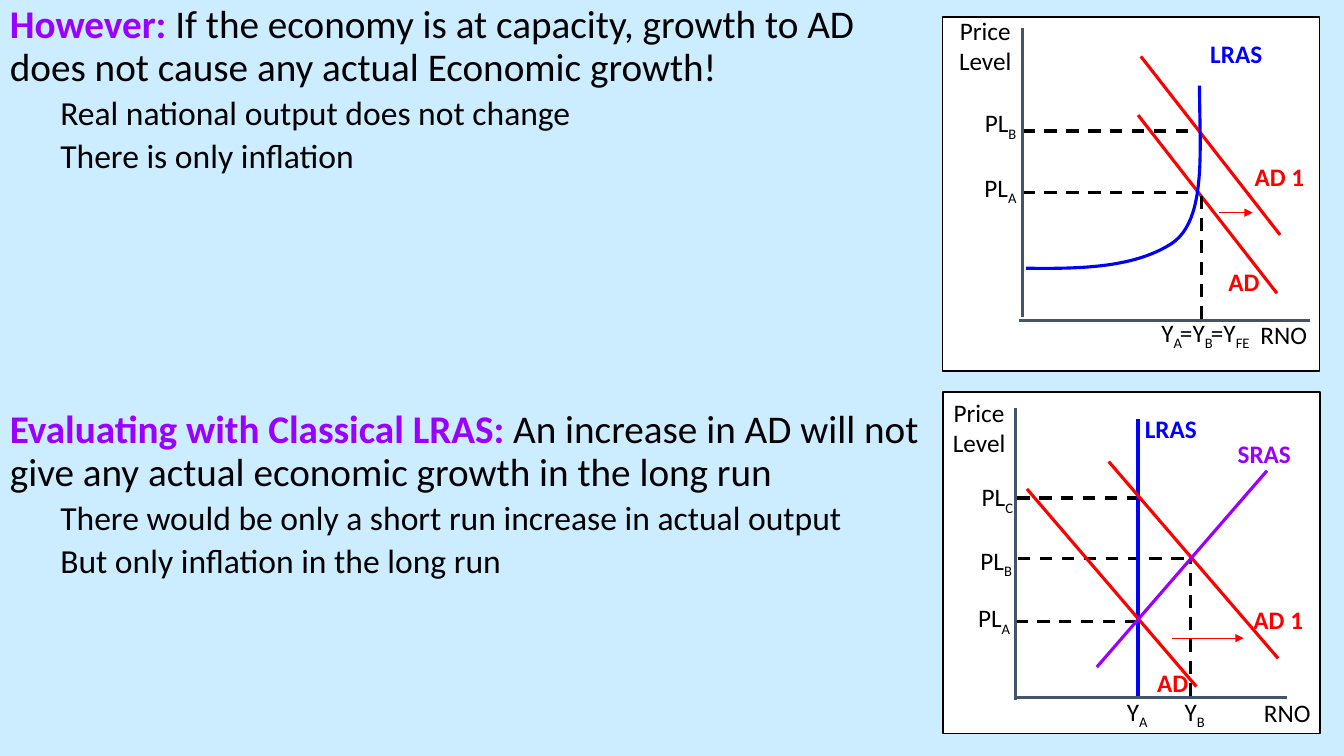
from dataclasses import dataclass

from lxml import etree
from pptx import Presentation
from pptx.dml.color import RGBColor
from pptx.enum.dml import MSO_LINE
from pptx.enum.shapes import MSO_CONNECTOR, MSO_SHAPE
from pptx.enum.text import PP_ALIGN
from pptx.oxml.ns import qn
from pptx.util import Cm, Pt

STRAIGHT = MSO_CONNECTOR.STRAIGHT
RECTANGLE = MSO_SHAPE.RECTANGLE
DASH = MSO_LINE.DASH
CENTER = PP_ALIGN.CENTER
LEFT = PP_ALIGN.LEFT


@dataclass(frozen=True)
class Theme:
    font: str = "Calibri"
    background: str = "CCECFF"
    panel: str = "FFFFFF"
    ink: str = "000000"
    axis: str = "44546A"
    demand: str = "FF0000"
    long_run: str = "0000FF"
    accent: str = "9900FF"
    heading_size: int = 28
    point_size: int = 24
    label_size: int = 18
    line_width: float = 2.25
    arrow_width: float = 0.5


class SlideBuilder:
    def __init__(self, slide, theme):
        self.slide = slide
        self.theme = theme
        self.shapes = slide.shapes
        fill = slide.background.fill
        fill.solid()
        fill.fore_color.rgb = RGBColor.from_string(theme.background)

    def style_font(self, font, size, color, bold=False):
        font.name = self.theme.font
        font.size = Pt(size)
        font.bold = bold
        font.color.rgb = RGBColor.from_string(color)

    def style_line(self, line, color, width):
        line.color.rgb = RGBColor.from_string(color)
        line.width = Pt(width)

    def text_frame(self, left, top, width, height):
        box = self.shapes.add_textbox(Cm(left), Cm(top), Cm(width), Cm(height))
        box.text_frame.word_wrap = True
        return box.text_frame

    def outline(self, left, top, width, height, sections):
        theme = self.theme
        frame = self.text_frame(left, top, width, height)
        paragraph = frame.paragraphs[0]
        for index, (lead, statement, space, points) in enumerate(sections):
            if index:
                paragraph = frame.add_paragraph()
            paragraph.line_spacing = 0.9
            paragraph.space_before = Pt(space)
            for text, color, bold in ((lead, theme.accent, True), (statement, theme.ink, False)):
                run = paragraph.add_run()
                run.text = text
                self.style_font(run.font, theme.heading_size, color, bold)
            for point in points:
                paragraph = frame.add_paragraph()
                paragraph.text = point
                paragraph.level = 1
                paragraph.line_spacing = 0.9
                paragraph.space_before = Pt(5)
                properties = paragraph._p.get_or_add_pPr()
                properties.set("marL", str(Cm(1.27)))
                properties.set("indent", "0")
                self.style_font(paragraph.font, theme.point_size, theme.ink)

    def start_diagram(self, left, top, width, height):
        self.shapes = self.slide.shapes.add_group_shape().shapes
        panel = self.shapes.add_shape(RECTANGLE, Cm(left), Cm(top), Cm(width), Cm(height))
        panel.shadow.inherit = False
        panel.fill.solid()
        panel.fill.fore_color.rgb = RGBColor.from_string(self.theme.panel)
        self.style_line(panel.line, self.theme.ink, 1)

    def line(self, start_x, start_y, end_x, end_y, color, width=None):
        connector = self.shapes.add_connector(
            STRAIGHT, Cm(start_x), Cm(start_y), Cm(end_x), Cm(end_y))
        self.style_line(connector.line, color, width or self.theme.line_width)
        etree.SubElement(connector.element.spPr, qn("a:effectLst"))
        return connector

    def guide(self, *ends):
        self.line(*ends, self.theme.ink).line.dash_style = DASH

    def arrow(self, *ends):
        connector = self.line(*ends, self.theme.demand, self.theme.arrow_width)
        properties = connector.line._get_or_add_ln()
        etree.SubElement(properties, qn("a:tailEnd"), type="triangle")

    def curve(self, segments, color, steps=24):
        points = []
        for controls in segments:
            for step in range(steps + 1):
                t = step / steps
                weights = ((1 - t) ** 3, 3 * t * (1 - t) ** 2, 3 * t * t * (1 - t), t ** 3)
                points.append(tuple(
                    Cm(sum(weight * value for weight, value in zip(weights, axis)))
                    for axis in zip(*controls)))
        builder = self.shapes.build_freeform(*points[0])
        builder.add_line_segments(points[1:], close=False)
        shape = builder.convert_to_shape()
        shape.shadow.inherit = False
        shape.fill.background()
        self.style_line(shape.line, color, self.theme.line_width)

    def label(self, text, left, top, width, height, subscript="", color=None):
        frame = self.text_frame(left, top, width, height)
        if color is None:
            frame.margin_left = frame.margin_right = 0
        frame.text = text
        for paragraph in frame.paragraphs:
            paragraph.alignment = LEFT if color else CENTER
            self.style_font(paragraph.font, self.theme.label_size,
                            color or self.theme.ink, bool(color))
        if subscript:
            run = frame.paragraphs[0].add_run()
            run.text = subscript
            run._r.get_or_add_rPr().set("baseline", "-25000")


def draw_capacity_diagram(builder):
    theme = builder.theme
    builder.start_diagram(23.75, 0.43, 9.5, 8.92)
    builder.guide(25.76, 3.3, 30.23, 3.3)
    builder.guide(25.76, 4.85, 30.12, 4.85)
    builder.line(25.76, 0.71, 25.76, 7.98, theme.axis)
    builder.line(25.68, 8.08, 33.02, 8.08, theme.axis)
    builder.line(28.68, 2.9, 32.18, 7.39, theme.demand)
    builder.line(28.75, 1.42, 32.26, 5.92, theme.demand)
    builder.guide(30.28, 8.03, 30.28, 4.88)
    bend = (29.51, 6.15)
    builder.curve([
        [(25.86, 6.76), (27.33, 6.78), (28.58, 6.73), bend],
        [bend, (30.43, 5.56), (30.23, 3.76), (30.23, 2.16)],
    ], theme.long_run)
    builder.arrow(30.73, 5.36, 31.57, 5.36)
    builder.label("Price\nLevel", 23.42, 0.25, 2.82, 2.49)
    for text, subscript, left, top, width in (
        ("RNO", "", 30.28, 7.92, 4.14),
        ("PL", "A", 24.49, 4.22, 1.45),
        ("PL", "B", 24.49, 2.59, 1.45),
        ("Y", "A", 28.91, 7.87, 1.24),
        ("=Y", "B", 29.44, 7.87, 1.42),
        ("=Y", "FE", 30.23, 7.87, 1.55),
    ):
        builder.label(text, left, top, width, 1.42, subscript)
    builder.label("LRAS", 30.25, 0.84, 2.72, 1.42, color=theme.long_run)
    builder.label("AD 1", 31.37, 3.94, 1.98, 1.42, color=theme.demand)
    builder.label("AD", 30.71, 6.58, 2.03, 1.42, color=theme.demand)


def draw_classical_diagram(builder):
    theme = builder.theme
    builder.start_diagram(23.77, 9.88, 9.5, 8.61)
    builder.guide(25.65, 14.07, 30, 14.07)
    builder.guide(25.63, 12.55, 28.65, 12.55)
    builder.guide(25.58, 15.65, 28.7, 15.65)
    builder.line(28.68, 17.6, 28.68, 10.57, theme.long_run)
    builder.guide(30, 17.53, 30, 14.07)
    builder.line(25.6, 10.29, 25.6, 17.63, theme.axis)
    builder.line(25.58, 17.58, 32.44, 17.58, theme.axis)
    builder.line(27.94, 11.63, 32.21, 16.59, theme.demand)
    builder.line(25.88, 12.32, 30.15, 17.3, theme.demand)
    builder.line(27.64, 16.81, 31.93, 11.86, theme.accent)
    builder.arrow(29.54, 16.08, 31.34, 16.08)
    builder.label("Price\nLevel", 23.75, 9.88, 1.85, 1.8)
    for text, subscript, left, top, width in (
        ("RNO", "", 30.51, 17.45, 3.86),
        ("PL", "A", 24.38, 15.06, 1.35),
        ("PL", "B", 24.43, 13.61, 1.35),
        ("PL", "C", 24.46, 12.01, 1.35),
        ("Y", "A", 28.09, 17.42, 1.14),
        ("Y", "B", 29.54, 17.42, 1.14),
    ):
        builder.label(text, left, top, width, 1.02, subscript)
    builder.label("LRAS", 28.6, 10.29, 2.54, 1.02, color=theme.long_run)
    builder.label("SRAS", 30.94, 10.92, 2.54, 1.02, color=theme.accent)
    builder.label("AD 1", 31.34, 15.11, 1.85, 1.02, color=theme.demand)
    builder.label("AD", 28.91, 16.69, 1.91, 1.02, color=theme.demand)


def main():
    presentation = Presentation()
    presentation.slide_width = Cm(33.87)
    presentation.slide_height = Cm(19.05)
    slide = presentation.slides.add_slide(presentation.slide_layouts[6])
    builder = SlideBuilder(slide, Theme())
    builder.outline(0, 0, 23.83, 19.05, [
        ("However: ",
         "If the economy is at capacity, growth to AD does not cause any actual Economic growth!",
         10, ["Real national output does not change", "There is only inflation"]),
        ("Evaluating with Classical LRAS: ",
         "An increase in AD will not give any actual economic growth in the long run",
         167, ["There would be only a short run increase in actual output",
               "But only inflation in the long run"]),
    ])
    draw_capacity_diagram(builder)
    draw_classical_diagram(builder)
    presentation.save("out.pptx")


if __name__ == "__main__":
    main()
